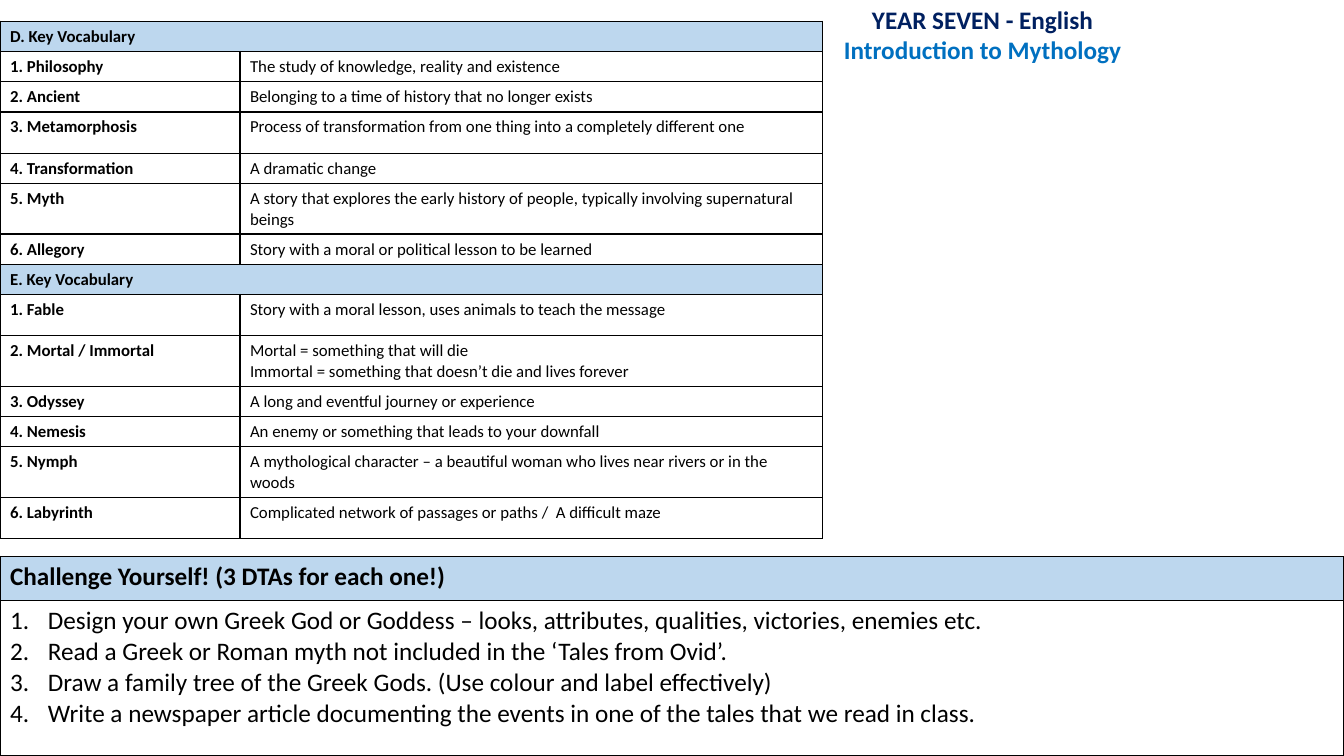
from lxml.etree import SubElement
from pptx import Presentation
from pptx.dml.color import RGBColor
from pptx.enum.text import MSO_ANCHOR, MSO_AUTO_SIZE, PP_ALIGN
from pptx.oxml.ns import qn
from pptx.util import Inches, Pt

HEADING = [("YEAR SEVEN - English", RGBColor(0x00, 0x20, 0x60)),
           ("Introduction to Mythology", RGBColor(0x00, 0x70, 0xC0))]

# Row height in inches, then the cell texts; a single text spans the row
SINGLE, LOOSE, DOUBLE = 0.3, 0.41, 0.5
VOCABULARY = [
    (SINGLE, "D. Key Vocabulary"),
    (SINGLE, "1. Philosophy", "The study of knowledge, reality and existence"),
    (SINGLE, "2. Ancient", "Belonging to a time of history that no longer exists"),
    (LOOSE, "3. Metamorphosis",
     "Process of transformation from one thing into a completely different one"),
    (SINGLE, "4. Transformation", "A dramatic change"),
    (DOUBLE, "5. Myth",
     "A story that explores the early history of people, typically involving supernatural beings"),
    (SINGLE, "6. Allegory", "Story with a moral or political lesson to be learned"),
    (SINGLE, "E. Key Vocabulary"),
    (LOOSE, "1. Fable", "Story with a moral lesson, uses animals to teach the message"),
    (DOUBLE, "2. Mortal / Immortal",
     "Mortal = something that will die\n"
     "Immortal = something that doesn’t die and lives forever"),
    (SINGLE, "3. Odyssey", "A long and eventful journey or experience"),
    (SINGLE, "4. Nemesis", "An enemy or something that leads to your downfall"),
    (DOUBLE, "5. Nymph",
     "A mythological character – a beautiful woman who lives near rivers or in the woods"),
    (LOOSE, "6. Labyrinth", "Complicated network of passages or paths /  A difficult maze"),
]
CHALLENGE_TITLE = "Challenge Yourself! (3 DTAs for each one!)"
CHALLENGES = [
    "Design your own Greek God or Goddess – looks, attributes, qualities, victories, enemies etc.",
    "Read a Greek or Roman myth not included in the ‘Tales from Ovid’.",
    "Draw a family tree of the Greek Gods. (Use colour and label effectively)",
    "Write a newspaper article documenting the events in one of the tales that we read in class.",
]
CHALLENGE_ROWS = [(0.44, CHALLENGE_TITLE), (1.54, "\n".join(CHALLENGES))]

BLACK = RGBColor(0, 0, 0)
BAND_BLUE = RGBColor(0xBD, 0xD7, 0xEE)
FONT = "Calibri"
SLIDE_WIDTH = 13.33


def style_font(font, size, bold, color=BLACK):
    font.name, font.size, font.bold = FONT, Pt(size), bold
    font.color.rgb = color


def add_borders(cell):
    properties = cell._tc.get_or_add_tcPr()
    for side in ("lnL", "lnR", "lnT", "lnB"):
        line = SubElement(properties, qn(f"a:{side}"), w=str(Pt(1)))
        fill = SubElement(line, qn("a:solidFill"))
        SubElement(fill, qn("a:srgbClr"), val=str(BLACK))


def fill_cell(cell, text, size, bold, banded):
    add_borders(cell)
    if banded:
        cell.fill.solid()
        cell.fill.fore_color.rgb = BAND_BLUE
    else:
        cell.fill.background()
    cell.text_frame.text = text
    for paragraph in cell.text_frame.paragraphs:
        for run in paragraph.runs:
            style_font(run.font, size, bold)


def add_plain_table(slide, top, widths, heights):
    table = slide.shapes.add_table(
        len(heights), len(widths), 0, Inches(top),
        Inches(sum(widths)), Inches(sum(heights))).table
    table.first_row = table.horz_banding = False
    for column, width in zip(table.columns, widths):
        column.width = Inches(width)
    for row, height in zip(table.rows, heights):
        row.height = Inches(height)
    return table


def number_paragraph(paragraph):
    properties = paragraph._p.get_or_add_pPr()
    indent = Inches(0.375)
    properties.set("marL", str(indent))
    properties.set("indent", str(-indent))
    SubElement(properties, qn("a:buFont"), typeface="+mj-lt")
    SubElement(properties, qn("a:buAutoNum"), type="arabicPeriod")


def add_vocabulary(slide):
    table = add_plain_table(slide, 0.21, [2.38, 5.78], [row[0] for row in VOCABULARY])
    for r, (_, term, *meaning) in enumerate(VOCABULARY):
        term_cell, meaning_cell = table.cell(r, 0), table.cell(r, 1)
        fill_cell(term_cell, term, 12, True, banded=not meaning)
        if meaning:
            fill_cell(meaning_cell, meaning[0], 12, False, banded=False)
        else:
            add_borders(meaning_cell)
            term_cell.merge(meaning_cell)


def add_challenges(slide):
    table = add_plain_table(slide, 5.52, [SLIDE_WIDTH], [row[0] for row in CHALLENGE_ROWS])
    for r, (_, text) in enumerate(CHALLENGE_ROWS):
        fill_cell(table.cell(r, 0), text, 18, bold=r == 0, banded=r == 0)
    for paragraph in table.cell(1, 0).text_frame.paragraphs:
        number_paragraph(paragraph)


def place_heading(slide):
    heading = slide.shapes.title
    heading.left, heading.top = Inches(6.41), Inches(-0.01)
    heading.width, heading.height = Inches(6.67), Inches(0.71)
    frame = heading.text_frame
    frame.text = "\n".join(text for text, _ in HEADING)
    frame.word_wrap = True
    frame.auto_size = MSO_AUTO_SIZE.SHAPE_TO_FIT_TEXT
    frame.vertical_anchor = MSO_ANCHOR.TOP
    for paragraph, (_, color) in zip(frame.paragraphs, HEADING):
        paragraph.alignment = PP_ALIGN.CENTER
        style_font(paragraph.runs[0].font, 18, True, color)


def main():
    deck = Presentation()
    deck.slide_width, deck.slide_height = Inches(SLIDE_WIDTH), Inches(7.5)
    slide = deck.slides.add_slide(deck.slide_layouts[5])
    add_vocabulary(slide)
    add_challenges(slide)
    place_heading(slide)
    deck.save("out.pptx")


if __name__ == "__main__":
    main()
